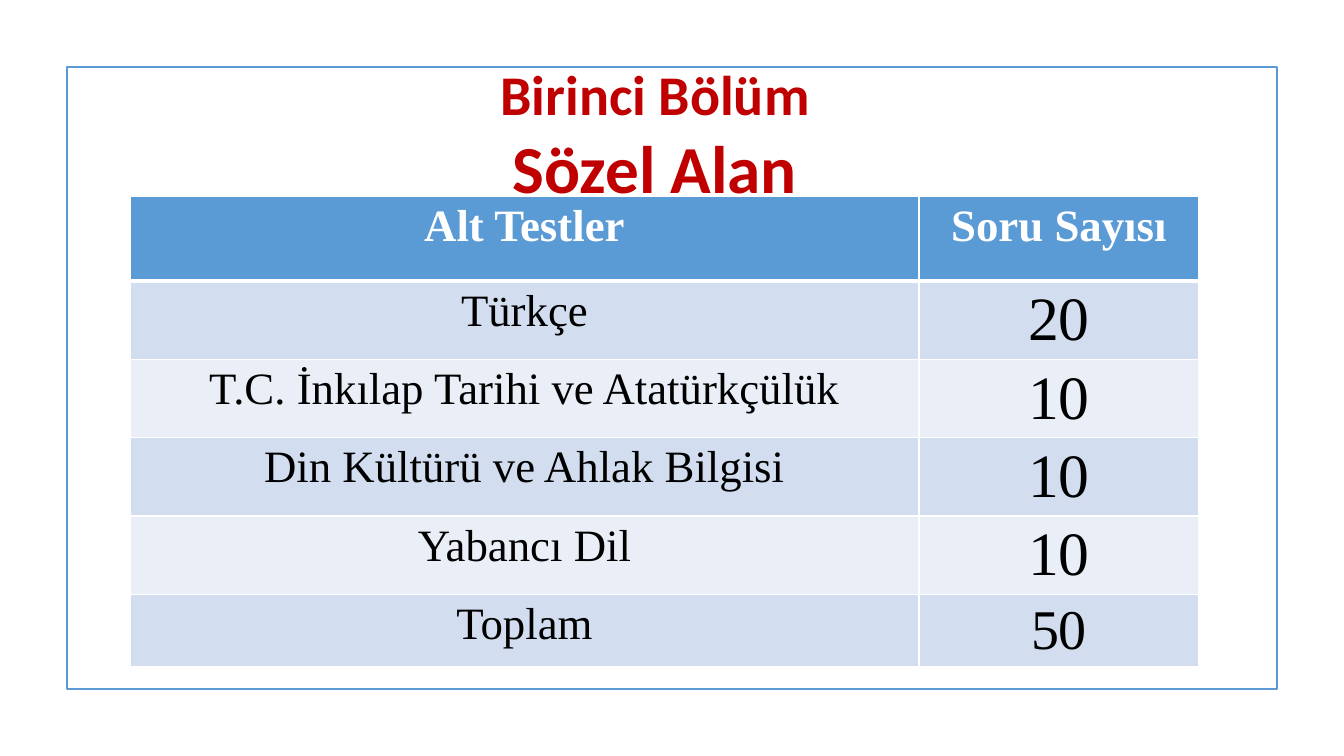
from lxml.etree import SubElement as Sub
from pptx import Presentation
from pptx.dml.color import RGBColor
from pptx.enum.shapes import MSO_SHAPE as Kind
from pptx.enum.text import MSO_ANCHOR as Anchor, MSO_AUTO_SIZE as Fit, PP_ALIGN as Align
from pptx.oxml.ns import qn
from pptx.util import Pt

PX = 9071  # EMU in one px
SIZE = (1344, 756)
BLUE, WHITE = "5B9BD5", "FFFFFF"
BANDS = ("D2DEEF", "EAEFF7")
FRAME = (67, 67, 1210, 622)
TITLE = (201, 70, 908, 126)
TABLE = (130, 196, 1069, 453)
COLS = (789, 280)
ROWS = (85, 75, 75, 75, 75, 68)

HEADS = (("Birinci Bölüm", 40), ("Sözel Alan", 48))
HEAD_FONT = {"name": "Calibri", "bold": True}
CELL_FONT = {"name": "Times New Roman"}
TESTS = (  # text and size of each cell
    (("Alt Testler", 32), ("Soru Sayısı", 32)),
    (("Türkçe", 32), ("20", 44)),
    (("T.C. İnkılap Tarihi ve Atatürkçülük", 32), ("10", 44)),
    (("Din Kültürü ve Ahlak Bilgisi", 32), ("10", 44)),
    (("Yabancı Dil", 32), ("10", 44)),
    (("Toplam", 32), ("50", 40)),
)


def rgb(code):
    return RGBColor.from_string(code)


def px(box):
    return [n * PX for n in box]


def put(obj, **vals):
    for key, val in vals.items():
        setattr(obj, key, val)


def write(para, text, size, color, font):
    run = para.add_run()
    run.text = text
    put(run.font, size=Pt(size), **font)
    run.font.color.rgb = rgb(color)


def edge(cell, low):
    """Draw white cell borders; low is the bottom width in points."""
    props = cell._tc.get_or_add_tcPr()
    for at, (side, wide) in enumerate(zip("LRTB", (1, 1, 1, low))):
        line = Sub(props, qn(f"a:ln{side}"), w=str(Pt(wide)))
        Sub(Sub(line, qn("a:solidFill")), qn("a:srgbClr"), val=WHITE)
        props.insert(at, line)


def add_frame(slide):
    frame = slide.shapes.add_shape(Kind.RECTANGLE, *px(FRAME))
    frame.shadow.inherit = False
    frame.fill.background()
    frame.line.color.rgb = rgb(BLUE)
    frame.line.width = Pt(1.25)


def add_title(slide):
    title = slide.shapes.title
    put(title, **dict(zip(("left", "top", "width", "height"), px(TITLE))))
    put(title.text_frame, word_wrap=True, auto_size=Fit.NONE, vertical_anchor=Anchor.MIDDLE)
    para = title.text_frame.paragraphs[0]
    put(para, alignment=Align.CENTER, line_spacing=1.0)
    for at, (text, size) in enumerate(HEADS):
        if at:
            para.add_line_break()
        write(para, text, size, "C00000", HEAD_FONT)


def add_tests(slide):
    table = slide.shapes.add_table(len(ROWS), len(COLS), *px(TABLE)).table
    for col, wide in zip(table.columns, COLS):
        col.width = wide * PX
    for at, (row, high, line) in enumerate(zip(table.rows, ROWS, TESTS)):
        row.height = high * PX
        head = at == 0
        for cell, (text, size) in zip(row.cells, line):
            cell.fill.solid()
            cell.fill.fore_color.rgb = rgb(BLUE if head else BANDS[(at - 1) % 2])
            edge(cell, 3 if head else 1)
            para = cell.text_frame.paragraphs[0]
            para.alignment = Align.CENTER
            write(para, text, size, WHITE if head else "000000", {**CELL_FONT, "bold": head})


def main():
    deck = Presentation()
    deck.slide_width, deck.slide_height = px(SIZE)
    slide = deck.slides.add_slide(deck.slide_layouts[5])
    add_frame(slide)
    add_title(slide)
    add_tests(slide)
    deck.save("out.pptx")


if __name__ == "__main__":
    main()
